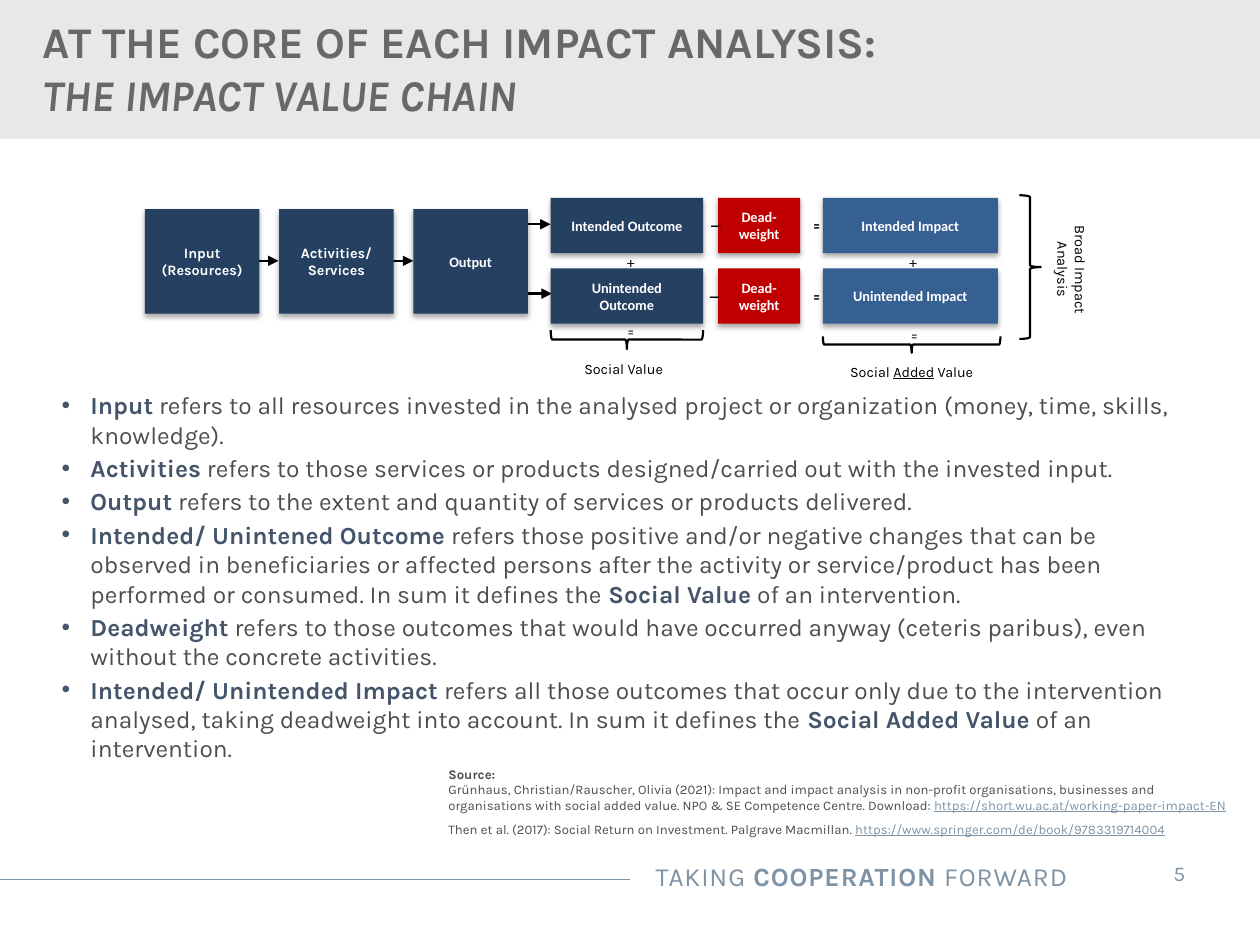
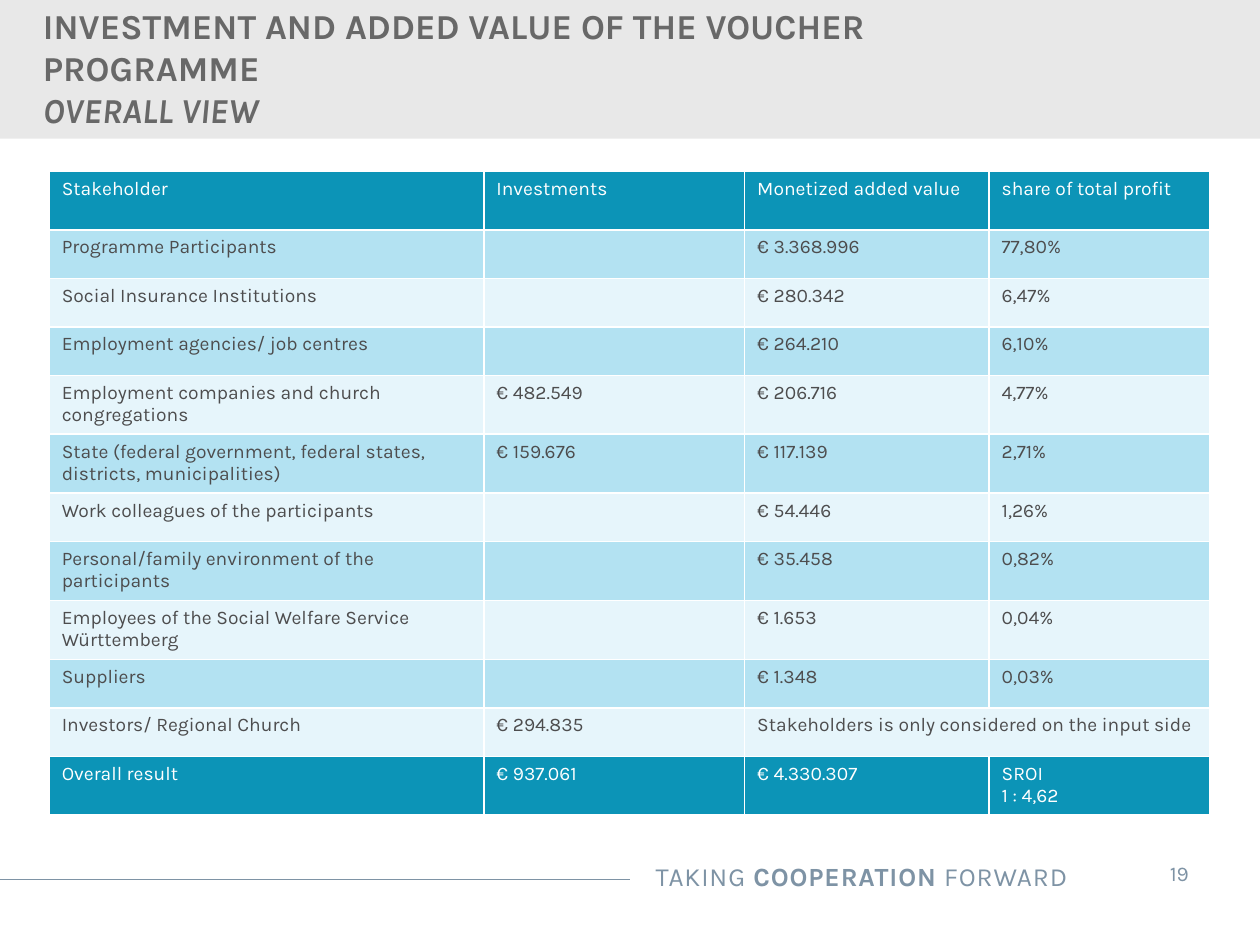
"""Two slides on impact analysis: the impact value chain and the voucher programme results."""
from pptx import Presentation, util as u
from pptx.dml.color import RGBColor
from pptx.enum import shapes, text
from pptx.oxml import parse_xml
from pptx.oxml.ns import nsdecls

BAND, TITLE, BODY = RGBColor(0xE8, 0xE8, 0xE8), RGBColor(0x68, 0x68, 0x68), RGBColor(0x4D, 0x4D, 0x4E)
FOOTER, TERM = RGBColor(0x7E, 0x93, 0xA5), RGBColor(0x44, 0x54, 0x6A)
NAVY, BLUE, RED = RGBColor(0x25, 0x40, 0x61), RGBColor(0x37, 0x60, 0x92), RGBColor(0xC0, 0, 0)
BLACK, WHITE = RGBColor(0, 0, 0), RGBColor(255, 255, 255)
TEAL, SKY, ICE = RGBColor(0x0C, 0x94, 0xB7), RGBColor(0xB3, 0xE2, 0xF2), RGBColor(0xE6, 0xF5, 0xFB)
FONT, LABEL_SIZE = "Karla", 8.2
WIDTH, HEIGHT = 10, 7.5
LEFT, CENTER, RIGHT = text.PP_ALIGN.LEFT, text.PP_ALIGN.CENTER, text.PP_ALIGN.RIGHT

CHAIN_TITLE = ("AT THE CORE OF EACH IMPACT ANALYSIS:", "THE IMPACT VALUE CHAIN")
STAGES = [("Input\n(Resources)", FONT), ("Activities/ Services", FONT), ("Output", "Calibri")]
STAGE_LEFT, STAGE_STEP, STAGE_TOP, STAGE_SIZE = 1.15, 1.065, 1.66, (0.91, 0.83)
PAIRS = [
    (4.37, 1.21, NAVY, ("Intended Outcome", "Unintended Outcome")),
    (5.7, 0.65, RED, ("Dead-weight", "Dead-weight")),
    (6.53, 1.39, BLUE, ("Intended Impact", "Unintended Impact")),
]
PAIR_TOP, PAIR_STEP, PAIR_HEIGHT = 1.57, 0.56, 0.44
ARROWS = [(1.92, 2.21, 2.07), (2.98, 3.28, 2.07), (4.05, 4.37, 1.78), (4.06, 4.38, 2.33)]
SIGNS = [
    ("+", 4.88, 1.96, 0.26), ("=", 4.88, 2.51, 0.26),
    ("+", 7.12, 1.96, 0.26), ("=", 7.13, 2.54, 0.26),
]
BOLD_SIGNS = [
    ("_", 5.54, 1.64, 0.24), ("_", 5.53, 2.21, 0.26),
    ("=", 6.36, 1.67, 0.19), ("=", 6.36, 2.23, 0.19),
]
SUMS = [("Social Value", 4.33, 2.81, 1.24), ("Social *Added* Value", 6.53, 2.83, 1.41)]
BRACES = [(4.9, 2.09, 0.15, 1.21, 90), (7.17, 2.03, 0.13, 1.41, 90), (8.09, 1.55, 0.17, 1.14, 0)]
TERMS = [
    "*Input* refers to all resources invested in the analysed project or organization "
    "(money, time, skills, knowledge).",
    "*Activities* refers to those services or products designed/carried out with the invested input.",
    "*Output* refers to the extent and quantity of services or products delivered.",
    "*Intended/ Unintened Outcome* refers those positive and/or negative changes that can be observed "
    "in beneficiaries or affected persons after the activity or service/product has been performed or "
    "consumed. In sum it defines the *Social Value* of an intervention.",
    "*Deadweight* refers to those outcomes that would have occurred anyway (ceteris paribus), "
    "even without the concrete activities.",
    "*Intended/ Unintended Impact* refers all those outcomes that occur only due to the intervention "
    "analysed, taking deadweight into account. In sum it defines the *Social Added Value* of an intervention.",
]
SOURCES = [
    "Source:",
    "Grünhaus, Christian/Rauscher, Olivia (2021): Impact and impact analysis in non-profit organisations, "
    "businesses and organisations with social added value. NPO & SE Competence Centre. "
    "Download: *https://short.wu.ac.at/working-paper-impact-EN*",
    "Then et al. (2017): Social Return on Investment. Palgrave Macmillan. "
    "*https://www.springer.com/de/book/9783319714004*",
]

RESULT_TITLE = ("INVESTMENT AND ADDED VALUE OF THE VOUCHER PROGRAMME", "OVERALL VIEW")
RESULTS = [
    ("Stakeholder", "Investments", "Monetized added value", "share of total profit"),
    ("Programme Participants", "", "€ 3.368.996", "77,80%"),
    ("Social Insurance Institutions", "", "€ 280.342", "6,47%"),
    ("Employment agencies/ job centres", "", "€ 264.210", "6,10%"),
    ("Employment companies and church congregations", "€ 482.549", "€ 206.716", "4,77%"),
    ("State (federal government, federal states, districts, municipalities)",
     "€ 159.676", "€ 117.139", "2,71%"),
    ("Work colleagues of the participants", "", "€ 54.446", "1,26%"),
    ("Personal/family environment of the participants", "", "€ 35.458", "0,82%"),
    ("Employees of the Social Welfare Service Württemberg", "", "€ 1.653", "0,04%"),
    ("Suppliers", "", "€ 1.348", "0,03%"),
    ("Investors/ Regional Church", "€ 294.835", "Stakeholders is only considered on the input side", ""),
    ("Overall result", "€ 937.061", "€ 4.330.307", "SROI\n1 : 4,62"),
]
RESULT_COLUMNS = (3.45, 2.07, 1.94, 1.75)
TALL_ROWS, TALL, SHORT = {0, 4, 5, 7, 8, 11}, 0.465, 0.385
INPUT_ONLY_ROW = 10


def inches(*lengths):
    return [u.Inches(length) for length in lengths]


def style(span, size, color, bold=False, font=FONT):
    span.font.name, span.font.size, span.font.bold = font, u.Pt(size), bold
    span.font.color.rgb = color


def write(frame, lines, size, color, align=LEFT, bold=False, font=FONT, mark=None):
    """Fill a frame with lines; parts between asterisks get the mark function."""
    frame.text = "\n".join(line.replace("*", "") for line in lines)
    for para, line in zip(frame.paragraphs, lines):
        para.alignment = align
        parts = line.split("*")
        if len(parts) > 1:
            para.text = ""
        for index, part in enumerate(parts):
            if not part:
                continue
            if len(parts) > 1:
                span = para.add_run()
                span.text = part
            else:
                span = para.runs[0]
            style(span, size, color, bold, font)
            if index % 2:
                mark(span)


def mark_term(span):
    span.font.bold, span.font.color.rgb = True, TERM


def mark_bold(span):
    span.font.bold = True


def mark_underline(span):
    span.font.underline = True


def mark_address(span):
    span.font.underline, span.font.color.rgb = True, FOOTER


def add_text(page, at, lines, size, color, wrap=True, **options):
    box = page.shapes.add_textbox(*inches(*at))
    box.text_frame.word_wrap = wrap
    box.text_frame.auto_size = text.MSO_AUTO_SIZE.SHAPE_TO_FIT_TEXT
    write(box.text_frame, lines, size, color, **options)
    return box


def add_line(page, start, end, y, color, weight, arrow=False):
    line = page.shapes.add_connector(shapes.MSO_CONNECTOR.STRAIGHT, *inches(start, y, end, y))
    line.line.color.rgb, line.line.width = color, u.Pt(weight)
    if arrow:
        line.line._get_or_add_ln().append(parse_xml(f'<a:tailEnd {nsdecls("a")} type="triangle"/>'))
    line.element.spPr.append(parse_xml(f'<a:effectLst {nsdecls("a")}/>'))


def add_page(deck, title_lines, title_size, number):
    page = deck.slides.add_slide(deck.slide_layouts[5])
    title = page.shapes.title
    band = page.shapes.add_shape(shapes.MSO_SHAPE.RECTANGLE, 0, 0, *inches(WIDTH, 1.1))
    band.shadow.inherit = False
    band.fill.solid()
    band.fill.fore_color.rgb = BAND
    band.line.fill.background()
    title.element.addprevious(band.element)

    title.left, title.top, title.width, title.height = inches(0, 0.16, 7.23, 0.75)
    frame = title.text_frame
    frame.auto_size, frame.vertical_anchor = text.MSO_AUTO_SIZE.NONE, text.MSO_ANCHOR.MIDDLE
    frame.margin_left = u.Inches(0.34)
    frame.text = "\v".join(title_lines)
    para = frame.paragraphs[0]
    para.alignment = LEFT
    for span in para.runs:
        style(span, title_size, TITLE, True)
    para.runs[-1].font.italic = True

    add_line(page, 0, WIDTH / 2, 6.98, FOOTER, 0.75)
    motto = add_text(page, (3.88, 6.78, 4.69, 0.35), ["TAKING *COOPERATION* FORWARD"], 15, FOOTER,
                     align=RIGHT, mark=mark_bold)
    for span in motto.text_frame.paragraphs[0].runs:
        span._r.get_or_add_rPr().set("spc", "50")
    folio = add_text(page, (8.99, 6.73, 0.74, 0.4), [str(number)], 12, FOOTER, wrap=False, align=CENTER)
    frame = folio.text_frame
    frame.margin_left = frame.margin_right = u.Inches(0.2)
    frame.margin_top = frame.margin_bottom = u.Inches(0.1)
    return page


def add_block(page, at, label, fill, font):
    block = page.shapes.add_shape(shapes.MSO_SHAPE.RECTANGLE, *inches(*at))
    block.fill.solid()
    block.fill.fore_color.rgb = fill
    block.line.fill.background()
    block.element.spPr.append(parse_xml(
        f'<a:effectLst {nsdecls("a")}><a:outerShdw blurRad="{u.Pt(3.1)}" dist="{u.Pt(1.8)}" dir="5400000" '
        'rotWithShape="0"><a:srgbClr val="000000"><a:alpha val="35000"/></a:srgbClr>'
        '</a:outerShdw></a:effectLst>'))
    block.text_frame.vertical_anchor = text.MSO_ANCHOR.MIDDLE
    write(block.text_frame, label.split("\n"), LABEL_SIZE, WHITE, CENTER, True, font)


def add_bullet(para):
    properties = para._p.get_or_add_pPr()
    properties.set("marL", str(u.Inches(0.23)))
    properties.set("indent", str(u.Inches(-0.23)))
    properties.append(parse_xml(f'<a:buFont {nsdecls("a")} typeface="Arial"/>'))
    properties.append(parse_xml(f'<a:buChar {nsdecls("a")} char="•"/>'))
    para.space_after = u.Pt(2.2)


def draw_chain(page):
    for start, end, y in ARROWS:
        add_line(page, start, end, y, BLACK, 1.25, arrow=True)
    for column, (label, font) in enumerate(STAGES):
        add_block(page, (STAGE_LEFT + column * STAGE_STEP, STAGE_TOP, *STAGE_SIZE), label, NAVY, font)
    for left, width, fill, labels in PAIRS:
        for row, label in enumerate(labels):
            add_block(page, (left, PAIR_TOP + row * PAIR_STEP, width, PAIR_HEIGHT), label, fill, "Calibri")
    for sign, left, top, width in SIGNS:
        add_text(page, (left, top, width, 0.24), [sign], LABEL_SIZE, BLACK, wrap=False)
    for sign, left, top, width in BOLD_SIGNS:
        add_text(page, (left, top, width, 0.24), [sign], LABEL_SIZE, BLACK, bold=True)
    for label, left, top, width in SUMS:
        add_text(page, (left, top, width, 0.24), [label], LABEL_SIZE, BLACK,
                 align=CENTER, mark=mark_underline)
    for *at, turn in BRACES:
        brace = page.shapes.add_shape(shapes.MSO_SHAPE.RIGHT_BRACE, *inches(*at))
        brace.shadow.inherit = False
        brace.fill.background()
        brace.line.color.rgb, brace.line.width = BLACK, u.Pt(1.25)
        brace.rotation = turn
    scope = add_text(page, (8.01, 1.95, 0.99, 0.38), ["Broad Impact Analysis"], 8.3, BLACK, align=CENTER)
    scope.rotation = 90


def draw_explanations(page):
    terms = add_text(page, (0.39, 3.05, 9.23, 3.07), TERMS, 14, BODY, mark=mark_term)
    for para in terms.text_frame.paragraphs:
        add_bullet(para)
    sources = add_text(page, (3.46, 6.03, 6.42, 0.68), SOURCES, 7.5, BODY, mark=mark_address)
    heading, _, last = sources.text_frame.paragraphs
    heading.runs[0].font.bold = True
    last.space_before = u.Pt(4.5)


def draw_results(page):
    heights = [TALL if row in TALL_ROWS else SHORT for row in range(len(RESULTS))]
    table = page.shapes.add_table(len(RESULTS), len(RESULT_COLUMNS),
                                  *inches(0.39, 1.36, sum(RESULT_COLUMNS), sum(heights))).table
    table.last_row = True
    for column, width in zip(table.columns, RESULT_COLUMNS):
        column.width = u.Inches(width)
    last = len(RESULTS) - 1
    for row, values in enumerate(RESULTS):
        table.rows[row].height = u.Inches(heights[row])
        edge = row in (0, last)
        for column, value in enumerate(values):
            cell = table.cell(row, column)
            cell.fill.solid()
            cell.fill.fore_color.rgb = TEAL if edge else (SKY if row % 2 else ICE)
            if value:
                write(cell.text_frame, value.split("\n"), 11, WHITE if edge else BODY)
            else:
                cell.text_frame.paragraphs[0]._p.get_or_add_endParaRPr().set("sz", "1100")
    table.cell(INPUT_ONLY_ROW, 2).merge(table.cell(INPUT_ONLY_ROW, 3))


def main():
    deck = Presentation()
    deck.slide_width, deck.slide_height = inches(WIDTH, HEIGHT)
    chain_page = add_page(deck, CHAIN_TITLE, 25, 5)
    draw_chain(chain_page)
    draw_explanations(chain_page)
    draw_results(add_page(deck, RESULT_TITLE, 20, 19))
    deck.save("out.pptx")


if __name__ == "__main__":
    main()
